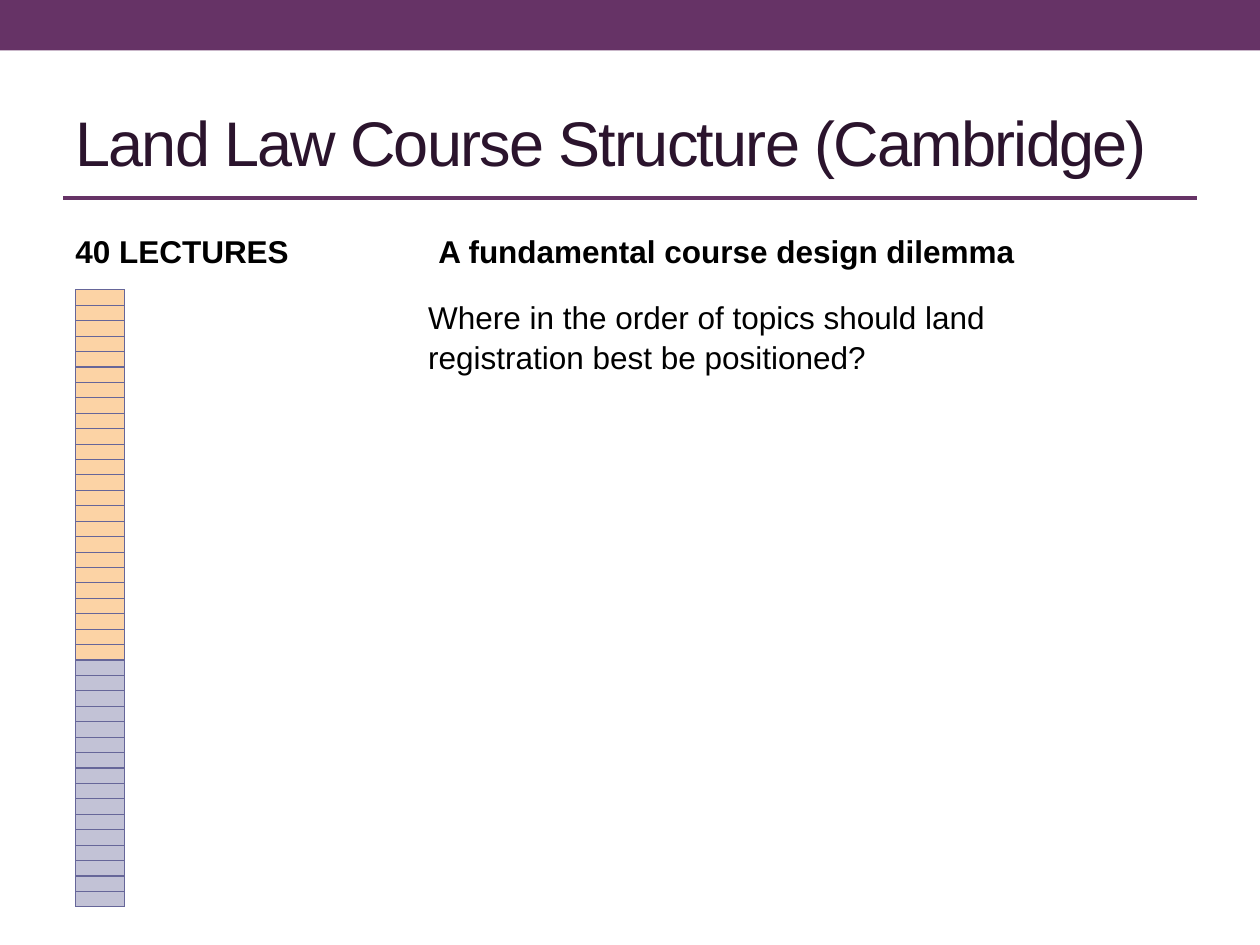
from lxml import etree
from pptx import Presentation
from pptx.dml.color import RGBColor
from pptx.enum import shapes, text
from pptx.oxml.ns import qn
from pptx.util import Inches, Pt

PURPLE = RGBColor(0x66, 0x33, 0x66)
TITLE = RGBColor(0x2B, 0x14, 0x2D)
BLACK = RGBColor(0, 0, 0)
ORANGE = RGBColor(0xFC, 0xD3, 0xA5)
LAVENDER = RGBColor(0xC2, 0xC2, 0xD6)
BORDER = RGBColor(0x66, 0x66, 0x99)
LECTURES = 40
FIRST_PART = 24


def add_band(s):
    sp = s.shapes.add_shape(shapes.MSO_SHAPE.RECTANGLE, 0, 0, Inches(10), Inches(0.4))
    sp.shadow.inherit = False
    sp.fill.solid()
    sp.fill.fore_color.rgb = PURPLE
    sp.line.fill.background()


def add_rule(s):
    line = s.shapes.add_connector(shapes.MSO_CONNECTOR.STRAIGHT,
                                  Inches(0.5), Inches(1.57), Inches(9.5), Inches(1.57))
    line.line.color.rgb = PURPLE
    line.line.width = Pt(2.08)
    etree.SubElement(line._element.spPr, qn("a:effectLst"))


def add_text(s, words, x, y, w, h, size=18, color=BLACK, bold=False, spacing=1.05):
    tf = s.shapes.add_textbox(Inches(x), Inches(y), Inches(w), Inches(h)).text_frame
    tf.word_wrap = True
    p = tf.paragraphs[0]
    p.line_spacing = spacing
    p.font.name = "Arial"
    p.font.size = Pt(size)
    p.font.bold = bold
    p.font.color.rgb = color
    r = p.add_run()
    r.text = words
    return tf


def add_title(s, words):
    tf = add_text(s, words, 0.5, 0.58, 9, 1.08, size=36, color=TITLE, spacing=1.0)
    tf.vertical_anchor = text.MSO_ANCHOR.MIDDLE
    tf.paragraphs[0].runs[0].font._element.set("spc", "-100")


def style_cell(cell, color):
    cell.margin_left = cell.margin_right = cell.margin_top = cell.margin_bottom = 0
    end = etree.SubElement(cell.text_frame.paragraphs[0]._p, qn("a:endParaRPr"))
    end.set("sz", "400")
    cell.fill.solid()
    cell.fill.fore_color.rgb = color
    tcPr = cell._tc.get_or_add_tcPr()
    for i, side in enumerate(("lnL", "lnR", "lnT", "lnB")):
        ln = etree.Element(qn(f"a:{side}"), w=str(Pt(0.75)))
        fill = etree.SubElement(ln, qn("a:solidFill"))
        etree.SubElement(fill, qn("a:srgbClr"), val=str(BORDER))
        tcPr.insert(i, ln)


def add_lecture_column(s):
    height = Inches(4.9)
    table = s.shapes.add_table(LECTURES, 1, Inches(0.6), Inches(2.3),
                               Inches(0.39), height).table
    table.first_row = table.horz_banding = False
    for i, row in enumerate(table.rows):
        row.height = height // LECTURES
        style_cell(row.cells[0], ORANGE if i < FIRST_PART else LAVENDER)


def main():
    prs = Presentation()
    prs.slide_width, prs.slide_height = Inches(10), Inches(7.5)
    s = prs.slides.add_slide(prs.slide_layouts[6])
    add_band(s)
    add_title(s, "Land Law Course Structure (Cambridge)")
    add_rule(s)
    add_lecture_column(s)
    add_text(s, "40 LECTURES", 0.5, 1.78, 3.16, 0.4, bold=True)
    add_text(s, "Where in the order of topics should land registration best be positioned?",
             3.3, 2.3, 5.66, 4.34)
    add_text(s, "A fundamental course design dilemma", 3.38, 1.78, 6.12, 0.4, bold=True)
    prs.save("out.pptx")


if __name__ == "__main__":
    main()
